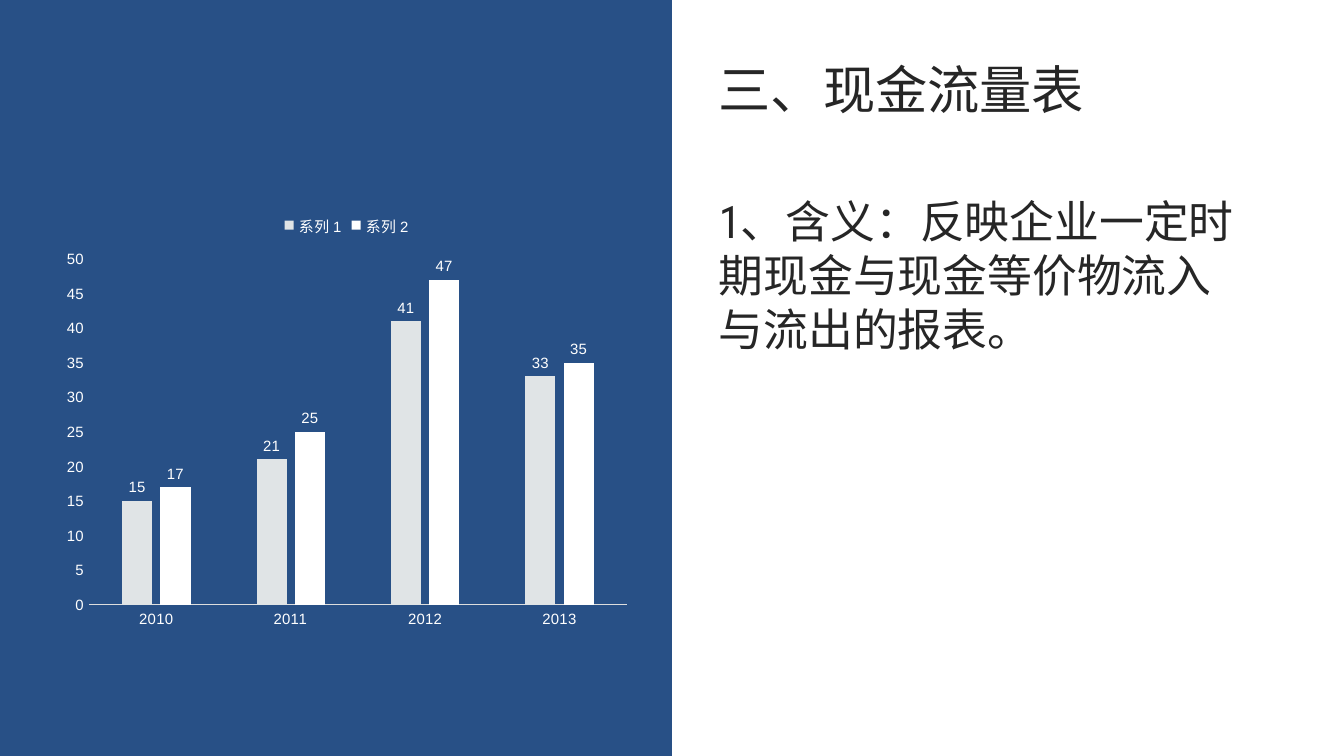
from pptx import Presentation
from pptx.chart.data import CategoryChartData
from pptx.dml.color import RGBColor
from pptx.enum.chart import XL_CHART_TYPE, XL_LABEL_POSITION, XL_LEGEND_POSITION, XL_TICK_MARK
from pptx.enum.shapes import MSO_SHAPE
from pptx.enum.text import MSO_AUTO_SIZE, PP_ALIGN
from pptx.util import Inches, Pt

RECTANGLE = MSO_SHAPE.RECTANGLE
COLUMNS = XL_CHART_TYPE.COLUMN_CLUSTERED
OUTSIDE_END = XL_LABEL_POSITION.OUTSIDE_END
LEGEND_TOP = XL_LEGEND_POSITION.TOP
NO_TICK = XL_TICK_MARK.NONE
GROW = MSO_AUTO_SIZE.SHAPE_TO_FIT_TEXT
LEFT = PP_ALIGN.LEFT

PAGE_WIDTH = 10
PAGE_HEIGHT = PAGE_WIDTH * 9 / 16

COLOURS = {
    "panel": "285086",
    "light": "FFFFFF",
    "pale": "E0E4E6",
    "axis": "DEDEDE",
    "text": "262626",
}
CHART_FONT = "Arial"
TEXT_FONT = "Roboto Condensed"

YEARS = ["2010", "2011", "2012", "2013"]
SERIES = [
    ("系列 1", [15, 21, 41, 33], "pale"),
    ("系列 2", [17, 25, 47, 35], "light"),
]
# Wording, size and space before, in points
PARAGRAPHS = [
    ("三、现金流量表", 28, 0),
    ("1、含义：反映企业一定时期现金与现金等价物流入与流出的报表。", 24, 39.5),
]


def colour(name):
    return RGBColor.from_string(COLOURS[name])


def style_font(font, name, size, colour_name):
    font.name = name
    font.size = Pt(size)
    font.color.rgb = colour(colour_name)


def style_chart_font(font):
    style_font(font, CHART_FONT, 8, "light")


def style_axes(chart):
    for axis in (chart.category_axis, chart.value_axis):
        axis.major_tick_mark = axis.minor_tick_mark = NO_TICK
        axis.has_major_gridlines = False
        style_chart_font(axis.tick_labels.font)
    line = chart.category_axis.format.line
    line.color.rgb = colour("axis")
    line.width = Pt(0.75)
    value_axis = chart.value_axis
    value_axis.format.line.fill.background()
    value_axis.minimum_scale = 0
    value_axis.maximum_scale = 50
    value_axis.major_unit = 5


def style_columns(plot):
    plot.gap_width = 219
    plot.overlap = -27
    plot.vary_by_categories = False
    for series, (_, _, fill_name) in zip(plot.series, SERIES):
        series.format.fill.solid()
        series.format.fill.fore_color.rgb = colour(fill_name)
        labels = series.data_labels
        labels.show_value = True
        labels.position = OUTSIDE_END
        style_chart_font(labels.font)


def add_chart_panel(page, left, top, width, height):
    panel = page.shapes.add_shape(
        RECTANGLE, Inches(left), Inches(top), Inches(width), Inches(height)
    )
    panel.shadow.inherit = False
    panel.fill.solid()
    panel.fill.fore_color.rgb = colour("panel")
    panel.line.fill.background()

    chart_data = CategoryChartData()
    chart_data.categories = YEARS
    for name, values, _ in SERIES:
        chart_data.add_series(name, values)
    chart = page.shapes.add_chart(
        COLUMNS, Inches(left + 0.41), Inches(top + 1.48),
        Inches(4.34), Inches(3.25), chart_data,
    ).chart
    style_chart_font(chart.font)
    chart.has_title = False
    chart.has_legend = True
    chart.legend.position = LEGEND_TOP
    chart.legend.include_in_layout = False
    style_chart_font(chart.legend.font)
    style_axes(chart)
    style_columns(chart.plots[0])


def add_definition(page, left, top, width, height):
    box = page.shapes.add_textbox(
        Inches(left), Inches(top), Inches(width), Inches(height)
    )
    frame = box.text_frame
    frame.text = "\n".join(wording for wording, _, _ in PARAGRAPHS)
    frame.word_wrap = True
    frame.auto_size = GROW
    for para, (_, size, space) in zip(frame.paragraphs, PARAGRAPHS):
        para.alignment = LEFT
        para.space_before = Pt(space)
        for span in para.runs:
            style_font(span.font, TEXT_FONT, size, "text")


def main():
    deck = Presentation()
    deck.slide_width = Inches(PAGE_WIDTH)
    deck.slide_height = Inches(PAGE_HEIGHT)
    page = deck.slides.add_slide(deck.slide_layouts[6])
    add_chart_panel(page, 0, 0, PAGE_WIDTH / 2, PAGE_HEIGHT)
    add_definition(page, 5.25, 0.38, 4.03, 2.34)
    deck.save("out.pptx")


if __name__ == "__main__":
    main()
